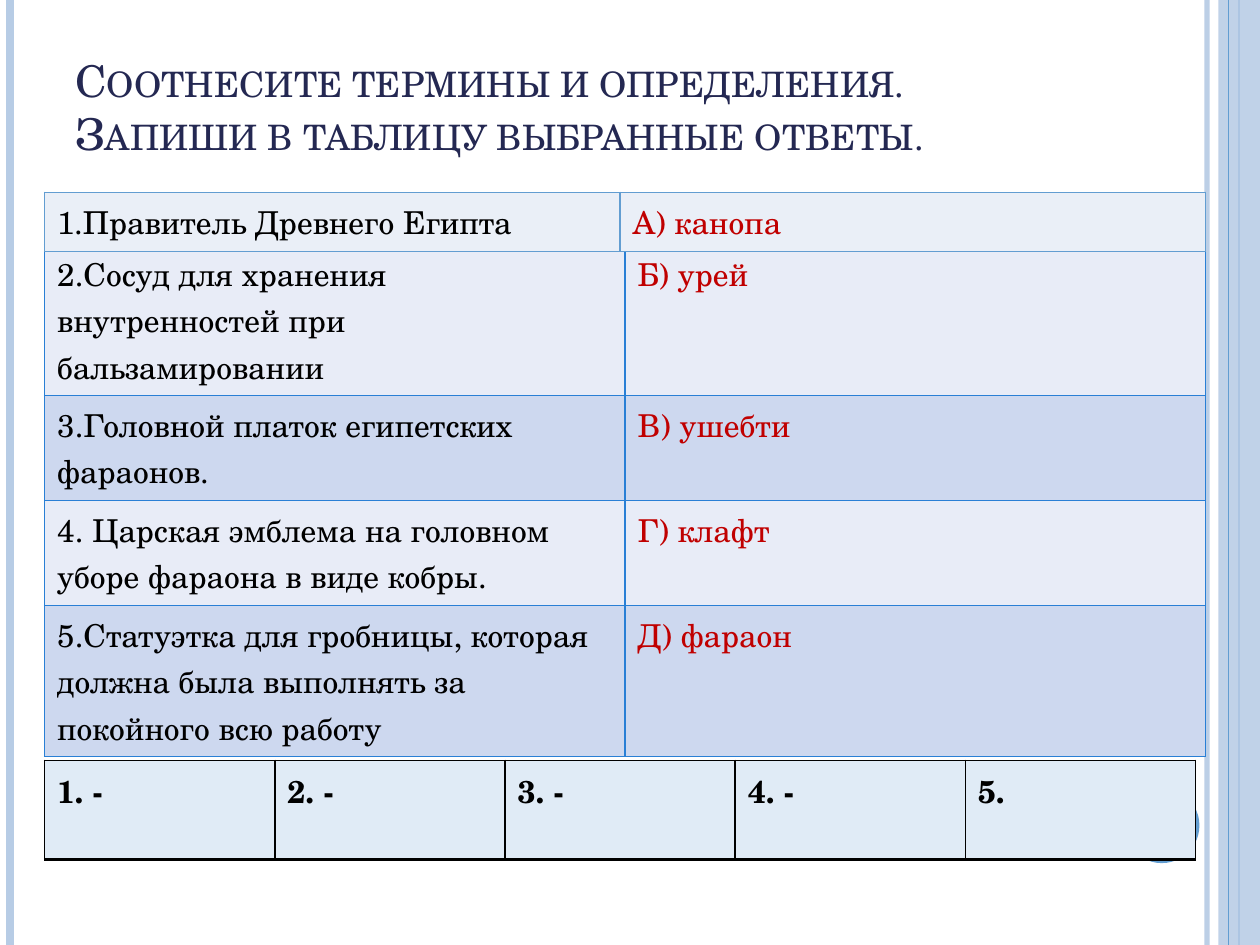
import pptx
import pptx.dml.color
import pptx.enum.shapes
import pptx.enum.text
import pptx.oxml
import pptx.oxml.ns
import pptx.util
from pptx.util import Cm

FONT = "TeX Gyre Schola"
WIDE, HIGH = 25.4, 19.05
LEFT = 0.9
BLACK, RED, NAVY = "000000", "C00000", "242852"
PALE, SKY = "B7CCE5", "629DD1"
SHAPE = pptx.enum.shapes.MSO_SHAPE


def paint(color, code):
    color.rgb = pptx.dml.color.RGBColor.from_string(code)


def node(tag, inner=""):
    return pptx.oxml.parse_xml(
        f'<a:{tag} {pptx.oxml.ns.nsdecls("a")}>{inner}</a:{tag.split()[0]}>')


class Deck:
    def __init__(self):
        self.prs = pptx.Presentation()
        self.prs.slide_width, self.prs.slide_height = Cm(WIDE), Cm(HIGH)
        self.slide = self.prs.slides.add_slide(self.prs.slide_layouts[6])
        self.items = self.slide.shapes

    def fade(self, fill, alpha):
        color = fill._xPr.find(".//" + pptx.oxml.ns.qn("a:srgbClr"))
        color.append(node(f'alpha val="{alpha * 1000}"'))

    def rule(self, x, width, code, alpha=100):
        """Draw a vertical line over the full slide height."""
        line = self.items.add_connector(
            pptx.enum.shapes.MSO_CONNECTOR.STRAIGHT, Cm(x), 0, Cm(x), Cm(HIGH))
        line.line.width = pptx.util.Pt(width)
        paint(line.line.color, code)
        if alpha < 100:
            self.fade(line.line.fill, alpha)
        line._element.spPr.append(node("effectLst"))
        return line

    def shape(self, kind, x, y, w, h, code, alpha=100):
        item = self.items.add_shape(kind, Cm(x), Cm(y), Cm(w), Cm(h))
        item.shadow.inherit = False
        item.fill.solid()
        paint(item.fill.fore_color, code)
        if alpha < 100:
            self.fade(item.fill, alpha)
        item.line.fill.background()
        return item

    def style(self, frame, size, code, bold=False):
        for para in frame.paragraphs:
            for run in para.runs:
                run.font.name = FONT
                run.font.size = pptx.util.Pt(size)
                run.font.bold = bold
                paint(run.font.color, code)

    def title(self, text, x, y, w, h):
        frame = self.items.add_textbox(Cm(x), Cm(y), Cm(w), Cm(h)).text_frame
        frame.word_wrap = True
        frame.vertical_anchor = pptx.enum.text.MSO_ANCHOR.BOTTOM
        frame.text = text
        self.style(frame, 25, NAVY)
        for run in frame.paragraphs[0].runs:
            run.font._element.set("cap", "small")

    def cell(self, cell, text, code, fill, edge, base, bold):
        cell.text = text
        self.style(cell.text_frame, 18, code, bold)
        props = cell._tc.get_or_add_tcPr()
        for side in "LRTB":
            width = pptx.util.Pt(base if side == "B" else 1)
            props.append(node(
                f'ln{side} w="{width}"',
                f'<a:solidFill><a:srgbClr val="{edge}"/></a:solidFill>'))
        cell.fill.solid()
        paint(cell.fill.fore_color, fill)

    def table(self, y, cols, rows, data, codes, fills, edge, base=1, bold=False):
        """Codes give the text colour by column, fills the colour by row."""
        table = self.items.add_table(
            len(rows), len(cols), Cm(LEFT), Cm(y),
            Cm(sum(cols)), Cm(sum(rows))).table
        table.first_row = table.horz_banding = False
        for col, width in zip(table.columns, cols):
            col.width = Cm(width)
        for r, (height, texts) in enumerate(zip(rows, data)):
            table.rows[r].height = Cm(height)
            for c, text in enumerate(texts):
                self.cell(table.cell(r, c), text, codes[c],
                          fills[r % len(fills)], edge, base, bold)


def main():
    deck = Deck()

    # Side stripes
    deck.rule(24.33, 3, PALE, 93)
    deck.rule(0.21, 4.5, PALE)
    band = deck.shape(SHAPE.RECTANGLE, 24.56, 0, 0.84, HIGH, PALE, 87)
    axis = deck.rule(24.98, 1.5, SKY)
    axis.begin_connect(band, 0)
    axis.end_connect(band, 2)
    axis._element.addnext(band._element)  # the band lies over its axis
    deck.rule(24.77, 0.75, SKY)
    deck.shape(SHAPE.OVAL, 22.66, 15.88, 1.52, 1.52, SKY)

    # Title
    deck.title("Соотнесите термины и определения.\vЗапиши в таблицу выбранные ответы.",
               1.27, 0.76, 20.83, 2.57)

    # Terms and meanings
    pairs = [
        ("2.Сосуд для хранения внутренностей при бальзамировании", "Б) урей"),
        ("3.Головной платок египетских фараонов.", "В) ушебти"),
        ("4. Царская эмблема на головном уборе фараона в виде кобры.", "Г) клафт"),
        ("5.Статуэтка для гробницы, которая должна была выполнять "
         "за покойного всю работу", "Д) фараон"),
    ]
    deck.table(4.93, [11.7] * 2, [3.04, 2.12, 2.12, 3.04], pairs,
               [BLACK, RED], ["E8ECF7", "CDD8EF"], "297FD5")

    # Answer row
    deck.table(15.33, [4.64] * 5, [2], [["1. -", "2. -", "3. -", "4. -", "5."]],
               [BLACK] * 5, ["E0EBF6"], BLACK, base=2, bold=True)

    # First pair
    deck.table(3.88, [11.6, 11.8], [1.19],
               [("1.Правитель Древнего Египта", "А) канопа")],
               [BLACK, RED], ["EAEFF7"], SKY)

    deck.prs.save("out.pptx")


if __name__ == "__main__":
    main()
